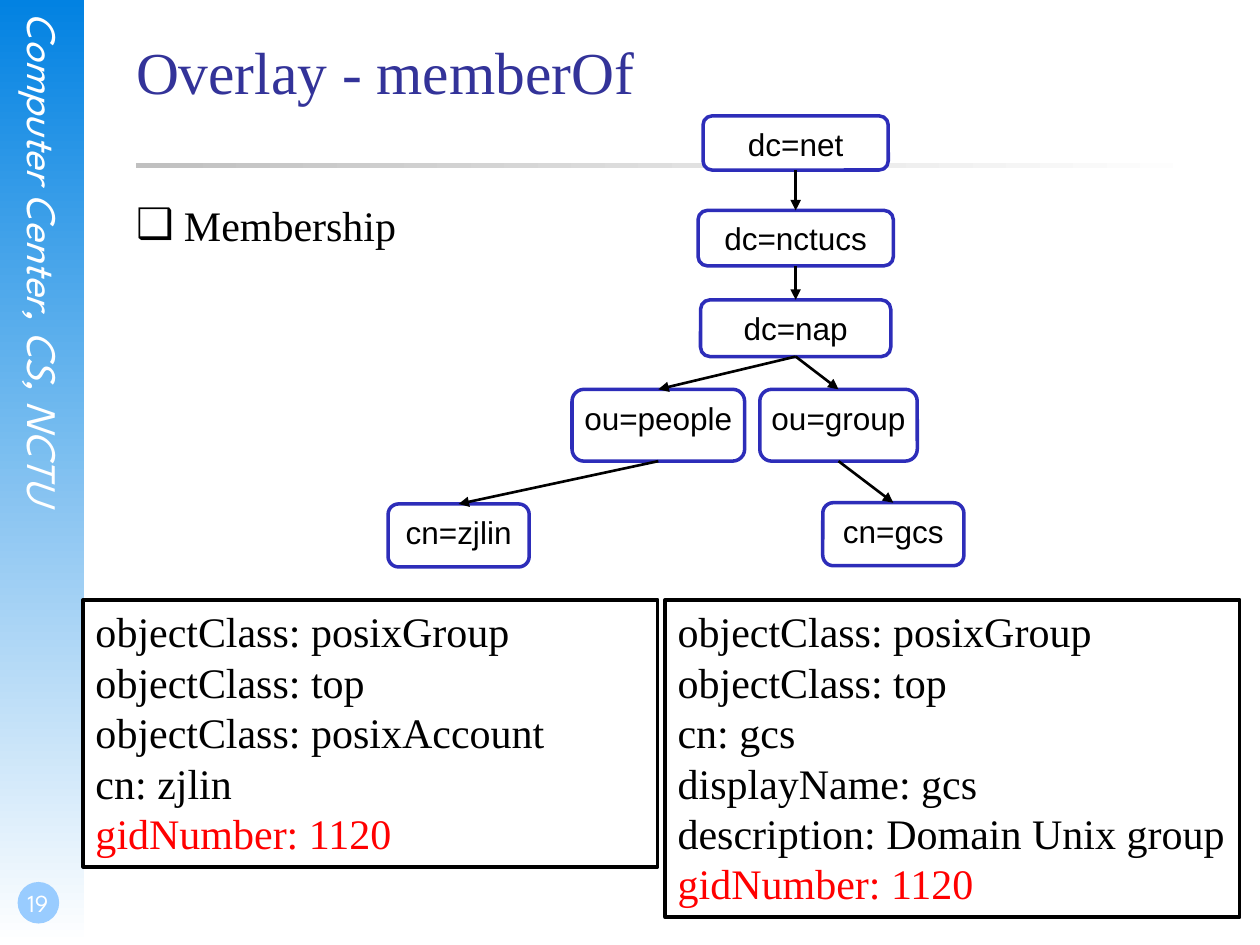
from lxml import etree
from pptx import Presentation
from pptx.dml.color import RGBColor
from pptx.enum import shapes, text
from pptx.oxml.ns import qn
from pptx.util import Inches, Pt

# Content
TITLE = "Overlay - memberOf"
BULLET = "Membership"
SIDE_TEXT = "Computer Center, CS, NCTU"
PAGE = "19"
NODES = {  # label: left, top, width, height
    "dc=net": (5.58, 0.92, 1.47, 0.43),
    "dc=nctucs": (5.54, 1.67, 1.55, 0.44),
    "dc=nap": (5.56, 2.38, 1.51, 0.45),
    "ou=people": (4.54, 3.09, 1.37, 0.57),
    "ou=group": (6.03, 3.09, 1.25, 0.57),
    "cn=zjlin": (3.08, 4, 1.12, 0.5),
    "cn=gcs": (6.53, 3.99, 1.12, 0.5),
}
EDGES = [
    ("dc=net", "dc=nctucs"), ("dc=nctucs", "dc=nap"),
    ("dc=nap", "ou=people"), ("dc=nap", "ou=group"),
    ("ou=people", "cn=zjlin"), ("ou=group", "cn=gcs"),
]
ENTRIES = [  # position, attributes; the last attribute is highlighted
    ((0.66, 4.76, 4.56, 2.12),
     ["objectClass: posixGroup", "objectClass: top",
      "objectClass: posixAccount", "cn: zjlin", "gidNumber: 1120"]),
    ((5.28, 4.76, 4.56, 2.52),
     ["objectClass: posixGroup", "objectClass: top", "cn: gcs",
      "displayName: gcs", "description: Domain Unix group",
      "gidNumber: 1120"]),
]

# Theme: type styles are (font, size, colour)
THEME = {
    "title": ("Times New Roman", 34, "333399"),
    "body": ("Times New Roman", 24, "000000"),
    "highlight": ("Times New Roman", 24, "FF0000"),
    "node": ("Arial", 18, "000000"),
    "side": ("League Spartan", 24, "FFFFFF"),
    "page": ("League Spartan", 14, "FFFFFF"),
    "paper": "FFFFFF", "ink": "000000", "node_line": "2D2DB9",
    "bar": "0282E2", "rule": "C0C0C0", "badge": "99CCFF",
}
NO_INSETS = (0, 0, 0, 0)
DEFAULT_INSETS = (0.1, 0.05, 0.1, 0.05)
SHAPE = shapes.MSO_SHAPE
ANCHOR = text.MSO_ANCHOR
LEFT, CENTER = text.PP_ALIGN.LEFT, text.PP_ALIGN.CENTER


def rgb(name):
    return RGBColor.from_string(THEME[name])


def place(sp, box):
    for name, value in zip(("left", "top", "width", "height"), box):
        setattr(sp, name, Inches(value))


def write(sp, lines, align=LEFT, insets=DEFAULT_INSETS, anchor=ANCHOR.TOP, wrap=True):
    """Fill a shape with (text, style) lines."""
    tf = sp.text_frame
    frame = {"word_wrap": wrap, "vertical_anchor": anchor,
             "auto_size": text.MSO_AUTO_SIZE.NONE}
    sides = ("margin_left", "margin_top", "margin_right", "margin_bottom")
    frame.update(zip(sides, map(Inches, insets)))
    for name, value in frame.items():
        setattr(tf, name, value)
    for i, (words, style) in enumerate(lines):
        p = tf.add_paragraph() if i else tf.paragraphs[0]
        p.alignment = align
        r = p.add_run()
        r.text = words
        font, size, color = THEME[style]
        for name, value in {"name": font, "size": Pt(size)}.items():
            setattr(r.font, name, value)
        r.font.color.rgb = RGBColor.from_string(color)
    return tf


def add_shape(s, kind, box, fill, line=None):
    sp = s.shapes.add_shape(kind, *map(Inches, box))
    sp.shadow.inherit = False
    sp.fill.solid()
    sp.fill.fore_color.rgb = rgb(fill)
    if line:
        sp.line.color.rgb = rgb(line)
        sp.line.width = Pt(2)
    else:
        sp.line.fill.background()
    return sp


def add_gradient(s, box, start, angle):
    sp = add_shape(s, SHAPE.RECTANGLE, box, start)
    sp.fill.gradient()
    sp.fill.gradient_angle = angle
    for stop, name, position in zip(sp.fill.gradient_stops, (start, "paper"), (0, 1)):
        stop.color.rgb = rgb(name)
        stop.position = position


def add_arrow(s, parent, child):
    line = s.shapes.add_connector(shapes.MSO_CONNECTOR.STRAIGHT, 0, 0, 0, 0)
    line.begin_connect(parent, 2)
    line.end_connect(child, 0)
    line.line.color.rgb = rgb("ink")
    line.line.width = Pt(1.5)
    etree.SubElement(line.line._get_or_add_ln(), qn("a:tailEnd"), type="triangle")
    etree.SubElement(line._element.spPr, qn("a:effectLst"))


def add_frame(s):
    # Side bar, page badge and title rule
    add_gradient(s, (0, 0, 0.67, 7.5), "bar", 270)
    side = s.shapes.add_textbox(*map(Inches, (0.15, 0.1, 0.4, 5.11)))
    tf = write(side, [(SIDE_TEXT, "side")], insets=NO_INSETS)
    tf.paragraphs[0].runs[0].font.italic = True
    tf._txBody.bodyPr.set("vert", "eaVert")
    add_shape(s, SHAPE.OVAL, (0.14, 7, 0.33, 0.33), "badge")
    page = s.shapes.add_textbox(*map(Inches, (0, 6.83, 0.58, 0.5)))
    write(page, [(PAGE, "page")], CENTER, (0.02, 0, 0, 0.05), ANCHOR.BOTTOM)
    add_gradient(s, (1.08, 1.29, 8.5, 0.04), "rule", 0)


def add_headings(s):
    # Title and bulleted body
    title, body = s.shapes.title, s.placeholders[1]
    place(title, (1.08, 0.28, 8.5, 1.25))
    write(title, [(TITLE, "title")], insets=NO_INSETS)
    place(body, (1.08, 1.58, 8.5, 0.75))
    p = write(body, [(BULLET, "body")], insets=NO_INSETS).paragraphs[0]
    p.space_before = Pt(6)
    pPr = p._p.get_or_add_pPr()
    for name, value in {"marL": 0.38, "indent": -0.38}.items():
        pPr.set(name, str(Inches(value)))
    etree.SubElement(pPr, qn("a:buChar"), char="❑")


def main():
    prs = Presentation()
    prs.slide_width, prs.slide_height = Inches(10), Inches(7.5)
    s = prs.slides.add_slide(prs.slide_layouts[1])
    add_frame(s)
    add_headings(s)

    # Directory tree
    nodes = {}
    for label, box in NODES.items():
        sp = add_shape(s, SHAPE.ROUNDED_RECTANGLE, box, "paper", "node_line")
        write(sp, [(label, "node")], CENTER, wrap=False)
        nodes[label] = sp
    for parent, child in EDGES:
        add_arrow(s, nodes[parent], nodes[child])

    # Entry details
    for box, attributes in ENTRIES:
        sp = add_shape(s, SHAPE.RECTANGLE, box, "paper", "ink")
        lines = [(a, "body") for a in attributes[:-1]]
        write(sp, lines + [(attributes[-1], "highlight")])

    prs.save("out.pptx")


if __name__ == "__main__":
    main()
